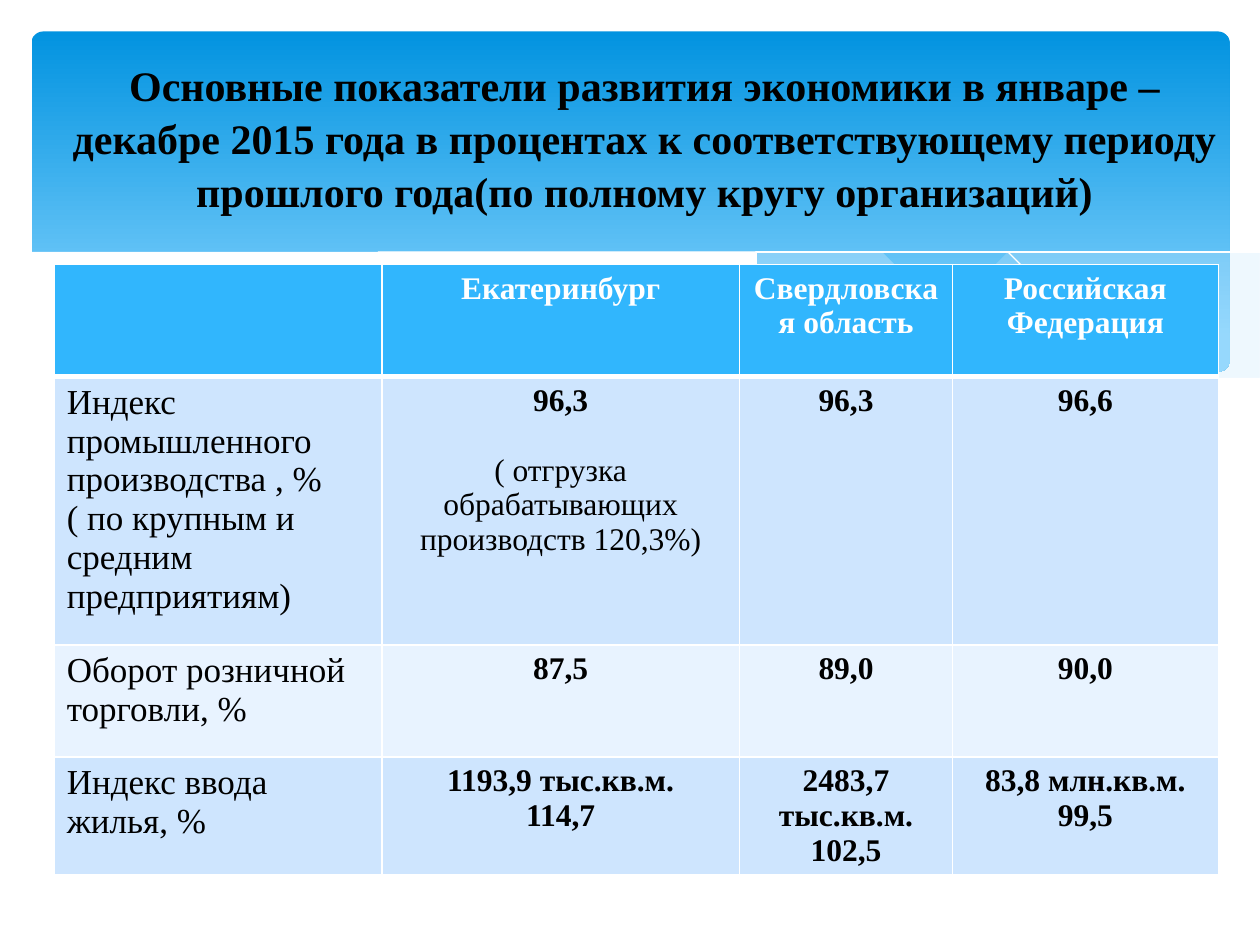
import pptx
import pptx.util
import pptx.oxml
from lxml import etree
from pptx.dml.color import RGBColor
from pptx.enum.shapes import MSO_SHAPE
from pptx.enum.text import MSO_ANCHOR, MSO_AUTO_SIZE, PP_ALIGN
from pptx.oxml.ns import qn
from pptx.util import Inches, Pt

FONT = "Times New Roman"
BLACK = RGBColor(0x00, 0x00, 0x00)
WHITE = RGBColor(0xFF, 0xFF, 0xFF)
SKY_TOP = RGBColor(0x02, 0x93, 0xE0)
SKY_BOTTOM = RGBColor(0x83, 0xD3, 0xFE)
MIST = RGBColor(0xC6, 0xE7, 0xFC)
HEADER = RGBColor(0x31, 0xB6, 0xFD)
BANDS = [RGBColor(0xE8, 0xF3, 0xFF), RGBColor(0xCE, 0xE5, 0xFE)]

RIGHT_SWELL = [(9.76, 2), (9.35, 2.07), (8.61, 2.23), (7.79, 2.42), (7.06, 2.57), (6.61, 2.65)]
RIGHT_SWELL_BASE = [(6.61, 2.65), (7.19, 2.72), (7.81, 2.77), (8.44, 2.77), (8.97, 2.7),
                    (9.42, 2.59), (9.76, 2.47)]
MIDDLE_CREST = [(8.93, 2.73), (8.07, 2.6), (7.06, 2.4), (6.29, 2.22), (5.55, 2.05),
                (4.89, 1.94), (4.2, 1.87), (3.61, 1.85), (2.86, 1.91)]
MIDDLE_BASE = [(2.86, 1.91), (3.62, 2.03), (4.49, 2.22), (5.66, 2.48), (6.5, 2.64),
               (7.22, 2.74), (7.96, 2.78), (8.57, 2.77), (8.93, 2.73)]
LONG_RIPPLE = [(3.09, 1.95), (3.53, 1.89), (4.16, 1.87), (4.89, 1.9), (5.82, 2),
               (6.95, 2.19), (7.95, 2.41), (9.07, 2.72)]
SHORT_RIPPLE = [(6.13, 2.57), (6.95, 2.35), (7.76, 2.16), (8.66, 1.99), (9.24, 1.9), (9.75, 1.85)]
WHITE_CREST = [(0.23, 2.13), (0.59, 1.99), (1.06, 1.89), (1.77, 1.84), (2.5, 1.86), (3.4, 1.97),
               (4.47, 2.2), (5.55, 2.45), (6.68, 2.65), (7.61, 2.75), (8.5, 2.75), (9.2, 2.65),
               (9.77, 2.46)]
WHITE_BASE = [(9.77, 3.29), (0.23, 3.29)]

TITLE = ("Основные показатели развития экономики в январе – декабре 2015 года в процентах "
         "к соответствующему периоду прошлого года(по полному кругу организаций)")
COLUMNS = [2.6, 2.84, 1.69, 2.11]
ROWS = [0.89, 2.13, 0.89, 0.89]
NOTE = "( отгрузка обрабатывающих производств 120,3%)"
CELLS = [
    [[], ["Екатеринбург"], ["Свердловская область"], ["Российская Федерация"]],
    [["Индекс промышленного производства , %\v( по крупным и средним предприятиям)"],
     ["96,3", NOTE], ["96,3"], ["96,6"]],
    [["Оборот розничной торговли, %"], ["87,5"], ["89,0"], ["90,0"]],
    [["Индекс ввода жилья, %"], ["1193,9 тыс.кв.м.", "114,7"],
     ["2483,7 тыс.кв.м.", "102,5"], ["83,8 млн.кв.м.", "99,5"]],
]


def write(p, text, size=18, color=BLACK, bold=True, align=PP_ALIGN.CENTER):
    p.text = text
    p.alignment = align
    for r in p.runs:
        r.font.name = FONT
        r.font.size = Pt(size)
        r.font.bold = bold
        r.font.color.rgb = color


def smooth(points, steps=4):
    padded = [points[0], *points, points[-1]]
    curve = []
    for a, b, c, d in zip(padded, padded[1:], padded[2:], padded[3:]):
        for t in (i / steps for i in range(steps)):
            curve.append(tuple(
                b[k] + ((c[k] - a[k]) * t
                        + (2 * a[k] - 5 * b[k] + 4 * c[k] - d[k]) * t ** 2
                        + (3 * b[k] - a[k] - 3 * c[k] + d[k]) * t ** 3) / 2
                for k in (0, 1)))
    return curve + [points[-1]]


def add_wave(s, points, fill=None, opacity=100):
    closed = fill is not None
    builder = s.shapes.build_freeform(*points[0], scale=Inches(1))
    builder.add_line_segments(points[1:], close=closed)
    sp = builder.convert_to_shape()
    sp.shadow.inherit = False
    if closed:
        sp.fill.solid()
        sp.fill.fore_color.rgb = fill
        sp.line.fill.background()
        if opacity < 100:
            color = sp.element.spPr.find(qn("a:solidFill"))[0]
            etree.SubElement(color, qn("a:alpha"), val=str(opacity * 1000))
    else:
        sp.fill.background()
        sp.line.color.rgb = WHITE
        sp.line.width = Pt(0)


def add_sky(s):
    sp = s.shapes.add_shape(MSO_SHAPE.ROUNDED_RECTANGLE, Inches(0.25), Inches(0.25),
                            Inches(9.51), Inches(2.7))
    sp.adjustments[0] = 0.034
    sp.shadow.inherit = False
    sp.line.fill.background()
    sp.fill.gradient()
    sp.fill.gradient_angle = 270
    for stop, color, position in zip(sp.fill.gradient_stops, (SKY_TOP, SKY_BOTTOM), (0, 0.9)):
        stop.color.rgb = color
        stop.position = position


def set_borders(cell, bottom, top):
    tcPr = cell._tc.get_or_add_tcPr()
    for side, width in (("L", 1), ("R", 1), ("T", top), ("B", bottom)):
        ln = etree.SubElement(tcPr, qn("a:ln" + side), w=str(Pt(width)))
        fill = etree.SubElement(ln, qn("a:solidFill"))
        etree.SubElement(fill, qn("a:srgbClr"), val=str(WHITE))


def fill_cell(cell, lines, row, col):
    set_borders(cell, bottom=3 if row == 0 else 1, top=3 if row == 1 else 1)
    cell.fill.solid()
    cell.fill.fore_color.rgb = BANDS[row % 2] if row else HEADER
    tf = cell.text_frame
    for i, line in enumerate(lines):
        p = tf.add_paragraph() if i else tf.paragraphs[0]
        if row and col == 0:
            write(p, line, size=20, bold=False, align=PP_ALIGN.LEFT)
        else:
            write(p, line, color=BLACK if row else WHITE, bold=line != NOTE)
        if line == NOTE:
            p.space_before = Pt(20)


def add_indicators(s):
    table = s.shapes.add_table(len(ROWS), len(COLUMNS), Inches(0.43), Inches(2.1),
                               Inches(sum(COLUMNS)), Inches(sum(ROWS))).table
    for column, width in zip(table.columns, COLUMNS):
        column.width = Inches(width)
    for i, height in enumerate(ROWS):
        table.rows[i].height = Inches(height)
        for j, lines in enumerate(CELLS[i]):
            fill_cell(table.cell(i, j), lines, i, j)


def place_title(s):
    sp = s.shapes.title
    sp.left, sp.top, sp.width, sp.height = map(Inches, (0.43, 0.68, 9.37, 0.81))
    tf = sp.text_frame
    tf.word_wrap = True
    tf.auto_size = MSO_AUTO_SIZE.NONE
    tf.vertical_anchor = MSO_ANCHOR.MIDDLE
    write(tf.paragraphs[0], TITLE, size=24)
    tf.paragraphs[0].line_spacing = 1.05
    sp.element.getparent().append(sp.element)


def main():
    prs = pptx.Presentation()
    prs.slide_width, prs.slide_height = Inches(10), Inches(7.5)
    s = prs.slides.add_slide(prs.slide_layouts[5])
    add_sky(s)
    add_wave(s, smooth(RIGHT_SWELL) + smooth(RIGHT_SWELL_BASE), MIST, 29)
    add_wave(s, smooth(MIDDLE_CREST) + smooth(MIDDLE_BASE), MIST, 40)
    add_wave(s, smooth(LONG_RIPPLE))
    add_wave(s, smooth(SHORT_RIPPLE))
    add_wave(s, smooth(WHITE_CREST) + WHITE_BASE, WHITE)
    add_indicators(s)
    place_title(s)
    prs.save("out.pptx")


if __name__ == "__main__":
    main()
